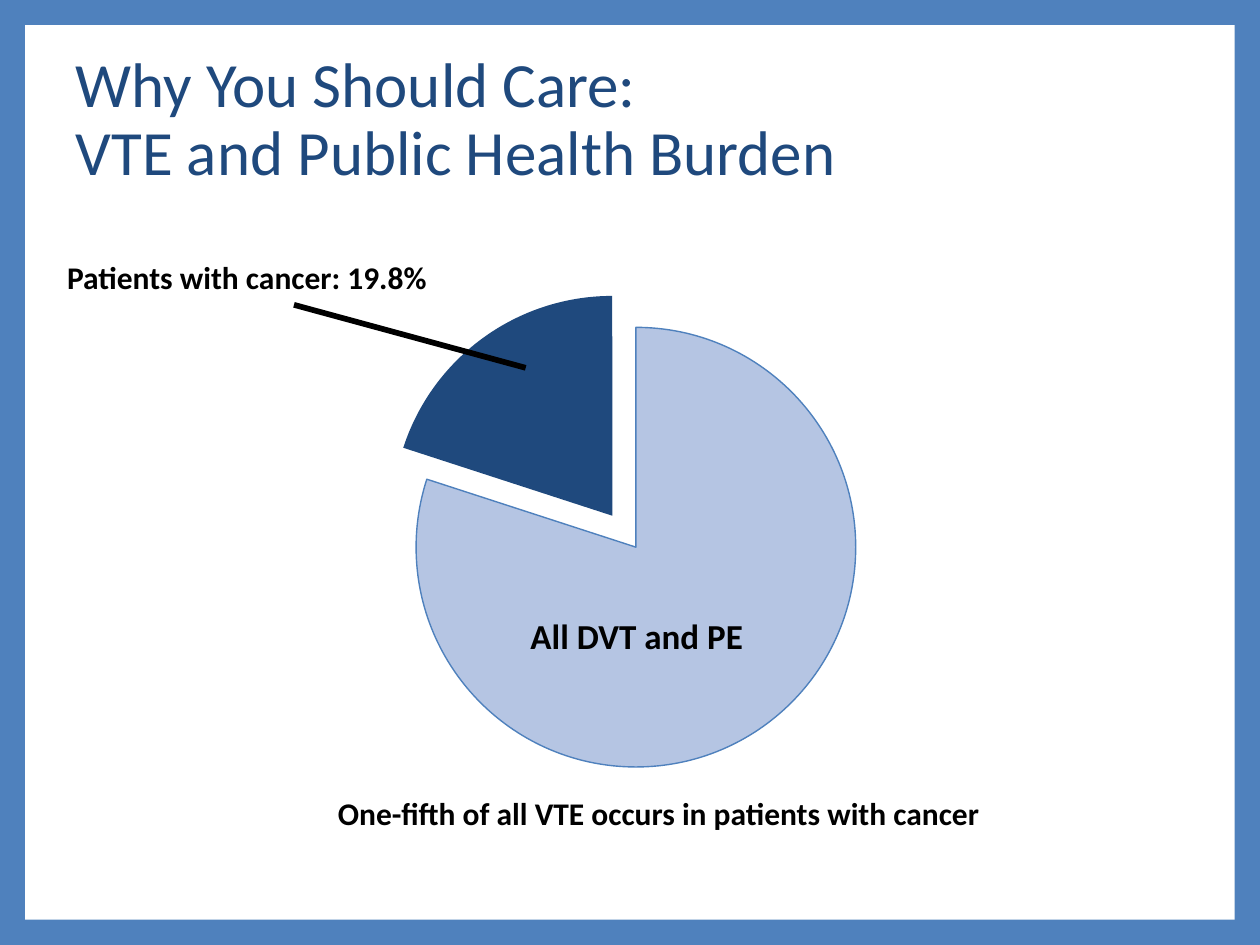
from math import ceil, cos, radians, sin, tan

from lxml.etree import SubElement
from pptx import Presentation
from pptx.dml.color import RGBColor
from pptx.enum.shapes import MSO_CONNECTOR, MSO_SHAPE
from pptx.enum.text import MSO_ANCHOR, MSO_AUTO_SIZE, PP_ALIGN
from pptx.oxml.ns import qn
from pptx.util import Pt

BLUE = RGBColor(0x4F, 0x81, 0xBD)
NAVY = RGBColor(0x1F, 0x49, 0x7D)
PALE = RGBColor(0xB5, 0xC5, 0xE3)
WHITE = RGBColor(0xFF, 0xFF, 0xFF)
BLACK = RGBColor(0, 0, 0)
FONT = "Calibri"
TITLE_ONLY = 5
RADIUS = 125.6
CANCER_START = 288  # degrees clockwise from twelve o'clock: the last fifth


def points(*lengths):
    return [Pt(length) for length in lengths]


def add_frame(page, box):
    """Blue background with a white panel, both on the slide master."""
    master = page.slide_layout.slide_master
    master.background.fill.solid()
    master.background.fill.fore_color.rgb = BLUE
    panel = page.shapes.add_shape(MSO_SHAPE.RECTANGLE, *points(*box))
    panel.shadow.inherit = False
    panel.fill.solid()
    panel.fill.fore_color.rgb = WHITE
    panel.line.fill.background()
    free_id = max(shape.shape_id for shape in master.shapes) + 1
    panel.element.nvSpPr.cNvPr.set("id", str(free_id))
    master.shapes[0].element.addprevious(panel.element)


def add_title(page, box, text):
    title = page.shapes.title
    title.left, title.top, title.width, title.height = points(*box)
    frame = title.text_frame
    frame.text = text
    frame.auto_size = MSO_AUTO_SIZE.NONE
    frame.vertical_anchor = MSO_ANCHOR.MIDDLE
    para = frame.paragraphs[0]
    para.alignment = PP_ALIGN.LEFT
    para.line_spacing = 0.9
    para.font.name, para.font.size = FONT, Pt(36)
    para.font.color.rgb = NAVY


def add_label(page, box, text, size=18, align=PP_ALIGN.CENTER, wrap=True):
    frame = page.shapes.add_textbox(*points(*box)).text_frame
    frame.word_wrap = wrap
    frame.auto_size = MSO_AUTO_SIZE.SHAPE_TO_FIT_TEXT
    para = frame.paragraphs[0]
    para.text = text
    para.alignment = align
    para.font.name, para.font.size, para.font.bold = FONT, Pt(size), True
    para.font.color.rgb = BLACK


def arc_curves(center, start, end):
    """Two handles and an end point for each curve of at most a quarter turn."""
    x, y = center
    vertices = []
    for first in range(start, end, 90):
        last = min(first + 90, end)
        a, b = radians(first), radians(last)
        reach = 4 / 3 * tan((b - a) / 4)
        for across, up in (
            (sin(a) + reach * cos(a), cos(a) - reach * sin(a)),
            (sin(b) - reach * cos(b), cos(b) + reach * sin(b)),
            (sin(b), cos(b)),
        ):
            vertices.append(points(x + RADIUS * across, y - RADIUS * up))
    return vertices


def add_sector(page, center, start, end, fill, line=None):
    """Pie sector between two angles, in degrees clockwise from the top."""
    x, y = center
    angle = radians(start)
    edge = points(x + RADIUS * sin(angle), y - RADIUS * cos(angle))
    builder = page.shapes.build_freeform(*edge)
    builder.add_line_segments(
        arc_curves(center, start, end) + [points(x, y)], close=True)
    sector = builder.convert_to_shape()
    segments = list(sector.element.iter(qn("a:lnTo")))
    for index in range(ceil((end - start) / 90)):
        handle, *others = segments[3 * index:3 * index + 3]
        handle.tag = qn("a:cubicBezTo")
        for other in others:
            handle.append(other[0])
            other.getparent().remove(other)
    sector.shadow.inherit = False
    sector.fill.solid()
    sector.fill.fore_color.rgb = fill
    if line is None:
        sector.line.fill.background()
    else:
        sector.line.color.rgb = line
        sector.line.width = Pt(0.8)


def add_leader(page, start, end):
    leader = page.shapes.add_connector(
        MSO_CONNECTOR.STRAIGHT, *points(*start, *end))
    leader.line.color.rgb = BLACK
    leader.line.width = Pt(3.25)
    SubElement(leader.element.spPr, qn("a:effectLst"))


def add_pie(page, box):
    """Pie with its cancer sector pulled out to the upper left."""
    left, top, width, height = box
    x, y = left + width - RADIUS, top + height - RADIUS
    add_sector(page, (x, y), 0, CANCER_START, PALE, BLUE)
    add_sector(page, (x - 13.5, y - 18), CANCER_START, 360, NAVY)
    add_label(page, (x - 79.5, y + 35, 160, 31), "All DVT and PE", size=20)
    add_leader(page, (x - 195.4, y - 138.5), (x - 63, y - 102.5))


def main():
    deck = Presentation()
    deck.slide_width, deck.slide_height = points(720, 540)
    page = deck.slides.add_slide(deck.slide_layouts[TITLE_ONLY])
    add_frame(page, (14.4, 14.4, 691.2, 511.2))
    add_title(page, (36, 30.24, 642.24, 77.76),
              "Why You Should Care:\vVTE and Public Health Burden")
    add_label(page, (0, 144, 282.24, 29), "Patients with cancer: 19.8%")
    add_pie(page, (230, 169, 259, 269.3))
    add_label(page, (186, 450, 385, 29),
              "One-fifth of all VTE occurs in patients with cancer",
              align=PP_ALIGN.LEFT, wrap=False)
    deck.save("out.pptx")


if __name__ == "__main__":
    main()
